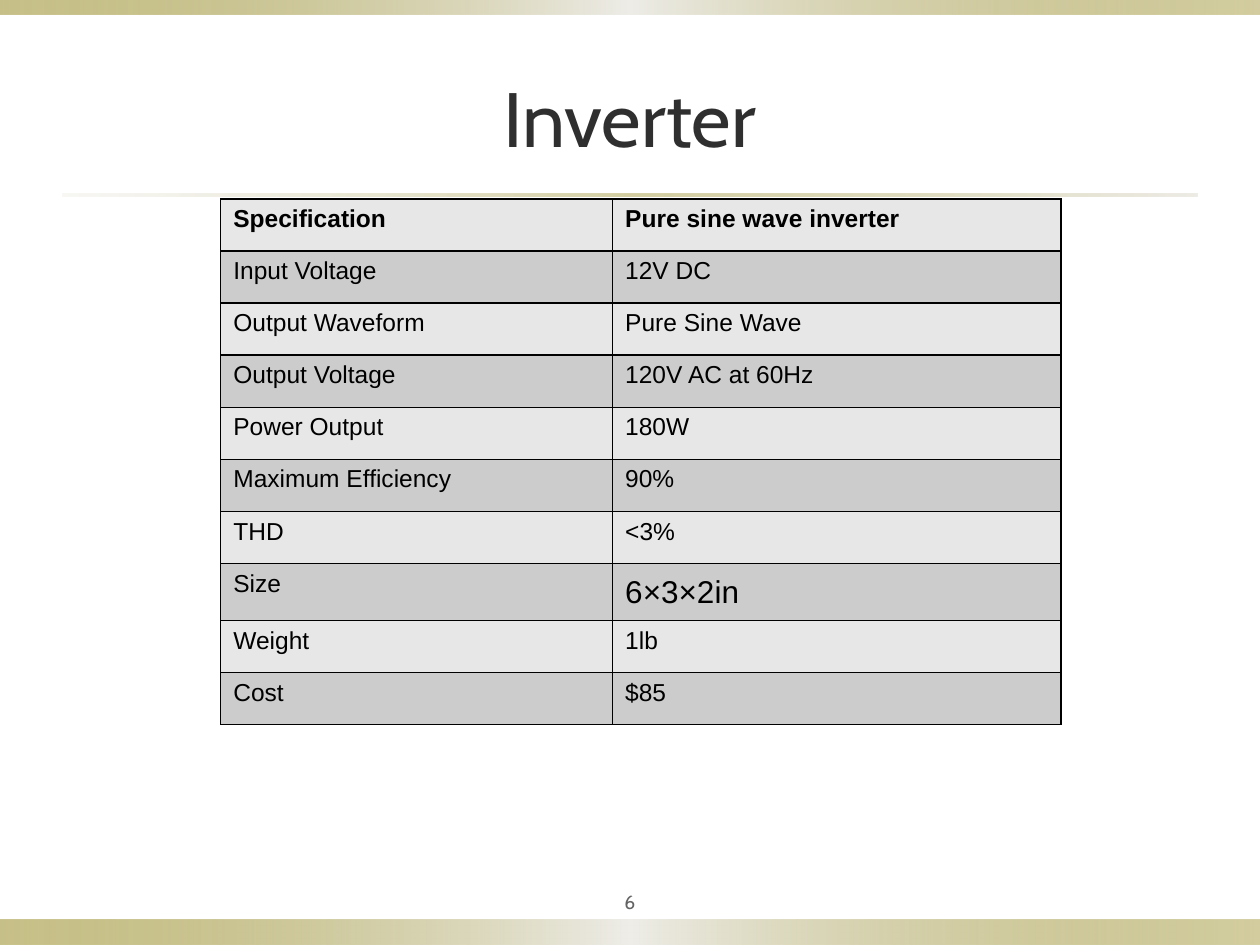
"""Builds the inverter specification slide with its table."""
from pptx import Presentation
from pptx.dml.color import RGBColor
from pptx.enum.shapes import MSO_SHAPE
from pptx.enum.text import MSO_ANCHOR, PP_ALIGN
from pptx.oxml import parse_xml
from pptx.oxml.ns import nsdecls, qn
from pptx.util import Cm, Pt

COLORS = {
    "olive": "918415", "pale": "EEEDE8", "sand": "DCD9CC",
    "title": "2F2F2F", "number": "636363", "ink": "000000",
    "light": "E7E7E7", "dark": "CCCCCC",
}
BAND = [(0, "olive", 50), (50, "pale", 100), (100, "olive", 40)]
RULE = [(0, "sand", 20), (50, "olive", 40), (100, "sand", 50)]
SPECIFICATIONS = [
    ("Specification", "Pure sine wave inverter"),
    ("Input Voltage", "12V DC"),
    ("Output Waveform", "Pure Sine Wave"),
    ("Output Voltage", "120V AC at 60Hz"),
    ("Power Output", "180W"),
    ("Maximum Efficiency", "90%"),
    ("THD", "<3%"),
    ("Size", "6×3×2in"),
    ("Weight", "1lb"),
    ("Cost", "$85"),
]


class SlideBuilder:
    """Holds the style and the current slide."""

    def __init__(self, page):
        self.page = page
        self.heading_font = "Cabin"
        self.table_font = "Arial"

    def paragraph(self, frame, text, font, size, color, bold=False, align=None):
        """Sets one formatted paragraph and returns it."""
        frame.text = text
        para = frame.paragraphs[0]
        para.alignment = align
        for span in para.runs:
            span.font.name = font
            span.font.size = Pt(size)
            span.font.bold = bold
            span.font.color.rgb = RGBColor.from_string(COLORS[color])
        return para

    def band(self, left, top, width, height, stops):
        """Draws a bar with a translucent horizontal gradient."""
        bar = self.page.shapes.add_shape(
            MSO_SHAPE.RECTANGLE, Cm(left), Cm(top), Cm(width), Cm(height))
        bar.shadow.inherit = False
        bar.line.fill.background()
        bar.fill.gradient()
        bar.fill.gradient_angle = 0
        stop_list = bar._element.spPr.find(qn("a:gradFill")).find(qn("a:gsLst"))
        for stop in list(stop_list):
            stop_list.remove(stop)
        for position, color, opacity in stops:
            stop_list.append(parse_xml(
                f'<a:gs {nsdecls("a")} pos="{position * 1000}">'
                f'<a:srgbClr val="{COLORS[color]}">'
                f'<a:alpha val="{opacity * 1000}"/></a:srgbClr></a:gs>'))

    def title(self, text, left, top, width, height):
        """Places and formats the title placeholder."""
        box = self.page.shapes.title
        box.left, box.top, box.width, box.height = map(
            Cm, (left, top, width, height))
        box.text_frame.vertical_anchor = MSO_ANCHOR.MIDDLE
        self.paragraph(box.text_frame, text, self.heading_font, 44, "title",
                       align=PP_ALIGN.CENTER)

    def number(self, text, left, top, width, height):
        """Adds the centred page number."""
        box = self.page.shapes.add_textbox(
            Cm(left), Cm(top), Cm(width), Cm(height))
        frame = box.text_frame
        frame.word_wrap = True
        frame.vertical_anchor = MSO_ANCHOR.MIDDLE
        frame.margin_left = frame.margin_right = Cm(0.13)
        frame.margin_top = frame.margin_bottom = Cm(0.13)
        self.paragraph(frame, text, self.heading_font, 11, "number",
                       align=PP_ALIGN.CENTER)

    def border(self, cell):
        """Gives a cell a thin border on every side."""
        properties = cell._tc.get_or_add_tcPr()
        for index, side in enumerate(("lnL", "lnR", "lnT", "lnB")):
            properties.insert(index, parse_xml(
                f'<a:{side} {nsdecls("a")} w="{Pt(1)}"><a:solidFill>'
                f'<a:srgbClr val="{COLORS["ink"]}"/></a:solidFill></a:{side}>'))

    def table(self, rows, left, top, widths, height, tall_height):
        """Adds the striped table, with a taller row for the size."""
        heights = [tall_height if row[0] == "Size" else height for row in rows]
        table = self.page.shapes.add_table(
            len(rows), len(widths), Cm(left), Cm(top),
            Cm(sum(widths)), Cm(sum(heights))).table
        for column, width in zip(table.columns, widths):
            column.width = Cm(width)
        for index, values in enumerate(rows):
            table.rows[index].height = Cm(heights[index])
            for column, text in enumerate(values):
                cell = table.cell(index, column)
                large = values[0] == "Size" and column == 1
                para = self.paragraph(
                    cell.text_frame, text, self.table_font,
                    18 if large else 14, "ink", bold=index == 0)
                if large:
                    para.line_spacing = 1.15
                cell.fill.solid()
                cell.fill.fore_color.rgb = RGBColor.from_string(
                    COLORS["dark" if index % 2 else "light"])
                self.border(cell)


def main():
    """Builds and saves the deck."""
    deck = Presentation()
    deck.slide_width, deck.slide_height = Cm(25.4), Cm(19.05)
    builder = SlideBuilder(deck.slides.add_slide(deck.slide_layouts[5]))
    builder.band(0, 18.54, 25.4, 0.51, BAND)
    builder.band(0, 0, 25.4, 0.3, BAND)
    builder.band(1.27, 3.91, 22.86, 0.05, RULE)
    builder.title("Inverter", 1.27, 0.76, 22.86, 3.18)
    builder.table(SPECIFICATIONS, 4.45, 4.01, (7.9, 9.04), 1.05, 1.15)
    builder.number("6", 11.43, 17.78, 2.54, 0.79)
    deck.save("out.pptx")


if __name__ == "__main__":
    main()
